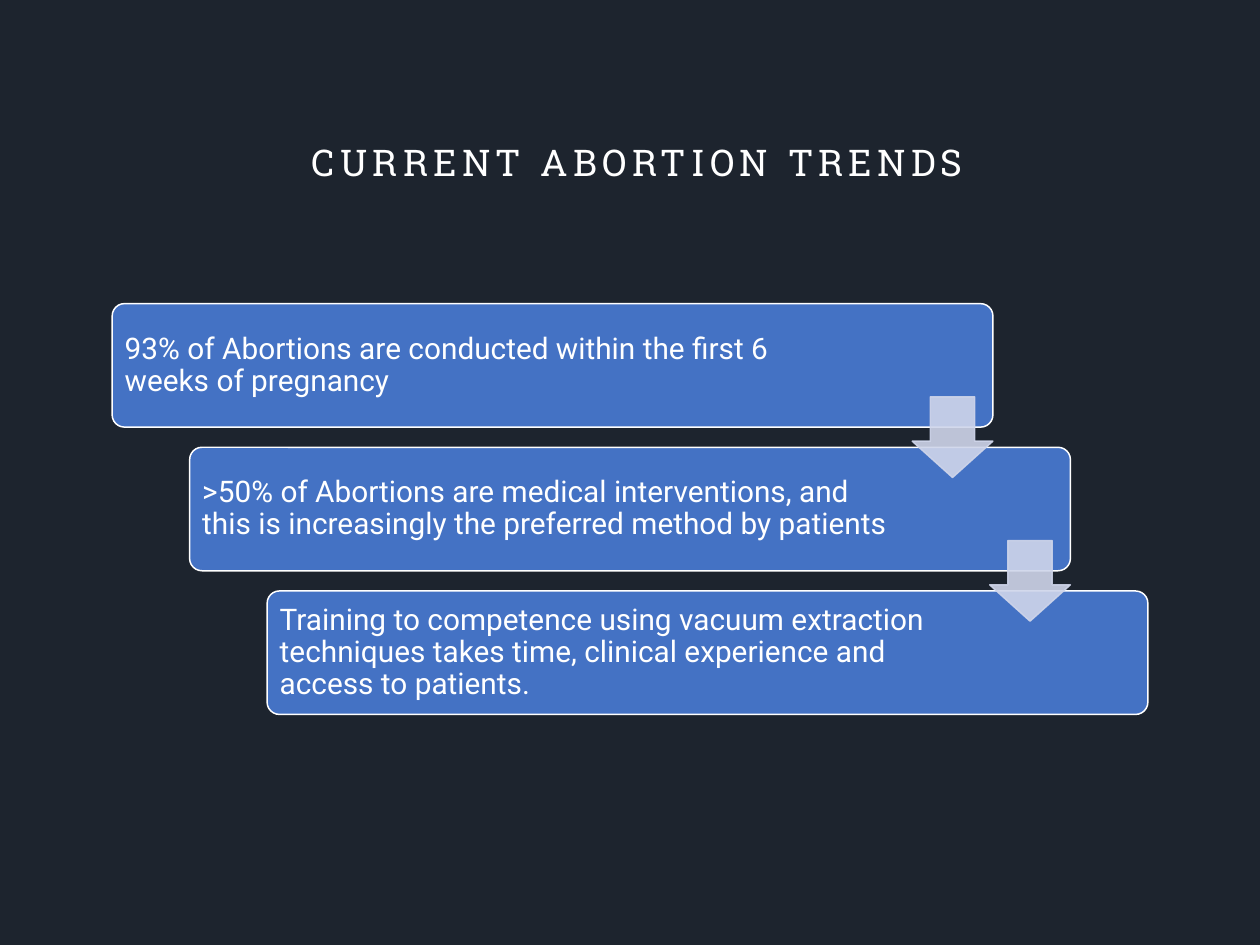
from dataclasses import dataclass
from lxml.etree import SubElement
from pptx import Presentation
from pptx.dml.color import RGBColor as Rgb
from pptx.enum.shapes import MSO_SHAPE as Kind
from pptx.enum.text import MSO_ANCHOR as Anchor, MSO_AUTO_SIZE as Fit, PP_ALIGN as Align
from pptx.oxml.ns import qn
from pptx.util import Inches, Pt


@dataclass(frozen=True)
class Theme:
    back: Rgb = Rgb.from_string("1D242E")
    card: Rgb = Rgb.from_string("4472C4")
    arrow: Rgb = Rgb.from_string("CFD5EA")
    ink: Rgb = Rgb.from_string("FFFFFF")
    head: str = "Roboto Slab"
    body: str = "Roboto"
    big: float = 21
    small: float = 17
    rule: float = 0.85


THEME = Theme()
LEFT, TOP = 0.89, 2.41
STEP_X, STEP_Y = 0.615, 1.14
CARD_W, CARD_H = 6.99, 0.98
EDGE, PAD = 0.03, 0.07
ARROW, DROP = 0.64, 0.74
STEPS = [
    ("93% of Abortions are conducted within the first 6 weeks of pregnancy", 5.93),
    (">50% of Abortions are medical interventions, and this is "
     "increasingly the preferred method by patients", 5.68),
    ("Training to competence using vacuum extraction techniques takes time, "
     "clinical experience and access to patients.", 5.68),
]


def box(*sizes):
    return [Inches(size) for size in sizes]


def style(para, face, size):
    font = para.font
    font.name, font.size = face, Pt(size)
    font.color.rgb = THEME.ink


def fade(color, share):
    """Give a solid fill or line colour an opacity, in percent."""
    node = color._xFill.find(qn("a:srgbClr"))
    SubElement(node, qn("a:alpha"), val=str(share * 1000))


def add_title(slide, text):
    title = slide.shapes.title
    title.left, title.top, title.width, title.height = box(LEFT, 1.11, 8.22, 0.72)
    frame = title.text_frame
    frame.text = text
    frame.word_wrap, frame.auto_size = True, Fit.NONE
    frame.vertical_anchor = Anchor.TOP
    frame.margin_left = Inches(0.12)
    frame.margin_right = frame.margin_top = frame.margin_bottom = 0
    para = frame.paragraphs[0]
    para.alignment = Align.CENTER
    style(para, THEME.head, THEME.big)
    para.runs[0].font._element.set("spc", "300")


def add_shape(slide, kind, place, fill, line, adjust):
    shape = slide.shapes.add_shape(kind, *box(*place))
    shape.shadow.inherit = False
    shape.fill.solid()
    shape.fill.fore_color.rgb = fill
    shape.line.color.rgb = line
    shape.line.width = Pt(THEME.rule)
    for spot, value in enumerate(adjust):
        shape.adjustments[spot] = value
    return shape


def add_card(slide, left, top, text, width):
    add_shape(slide, Kind.ROUNDED_RECTANGLE, (left, top, CARD_W, CARD_H),
              THEME.card, THEME.ink, [0.1])
    label = slide.shapes.add_textbox(
        *box(left + EDGE, top + EDGE, width, CARD_H - 2 * EDGE))
    frame = label.text_frame
    frame.word_wrap = True
    frame.vertical_anchor = Anchor.MIDDLE
    frame.margin_left = frame.margin_right = Inches(PAD)
    frame.margin_top = frame.margin_bottom = Inches(PAD)
    frame.text = text
    para = frame.paragraphs[0]
    para.line_spacing = 0.9
    style(para, THEME.body, THEME.small)


def add_arrow(slide, left, top):
    arrow = add_shape(slide, Kind.DOWN_ARROW, (left, top, ARROW, ARROW),
                      THEME.arrow, THEME.arrow, [0.55, 0.45])
    for fill in (arrow.fill, arrow.line.fill):
        fade(fill.fore_color, 90)


def main():
    deck = Presentation()
    deck.slide_width, deck.slide_height = box(10, 7.5)
    slide = deck.slides.add_slide(deck.slide_layouts[5])
    slide.background.fill.solid()
    slide.background.fill.fore_color.rgb = THEME.back
    add_title(slide, "CURRENT ABORTION TRENDS")
    spots = [(LEFT + row * STEP_X, TOP + row * STEP_Y) for row in range(len(STEPS))]
    for (left, top), (text, width) in zip(spots, STEPS):
        add_card(slide, left, top, text, width)
    for left, top in spots[:-1]:
        add_arrow(slide, left + CARD_W - ARROW, top + DROP)
    deck.save("out.pptx")


if __name__ == "__main__":
    main()
